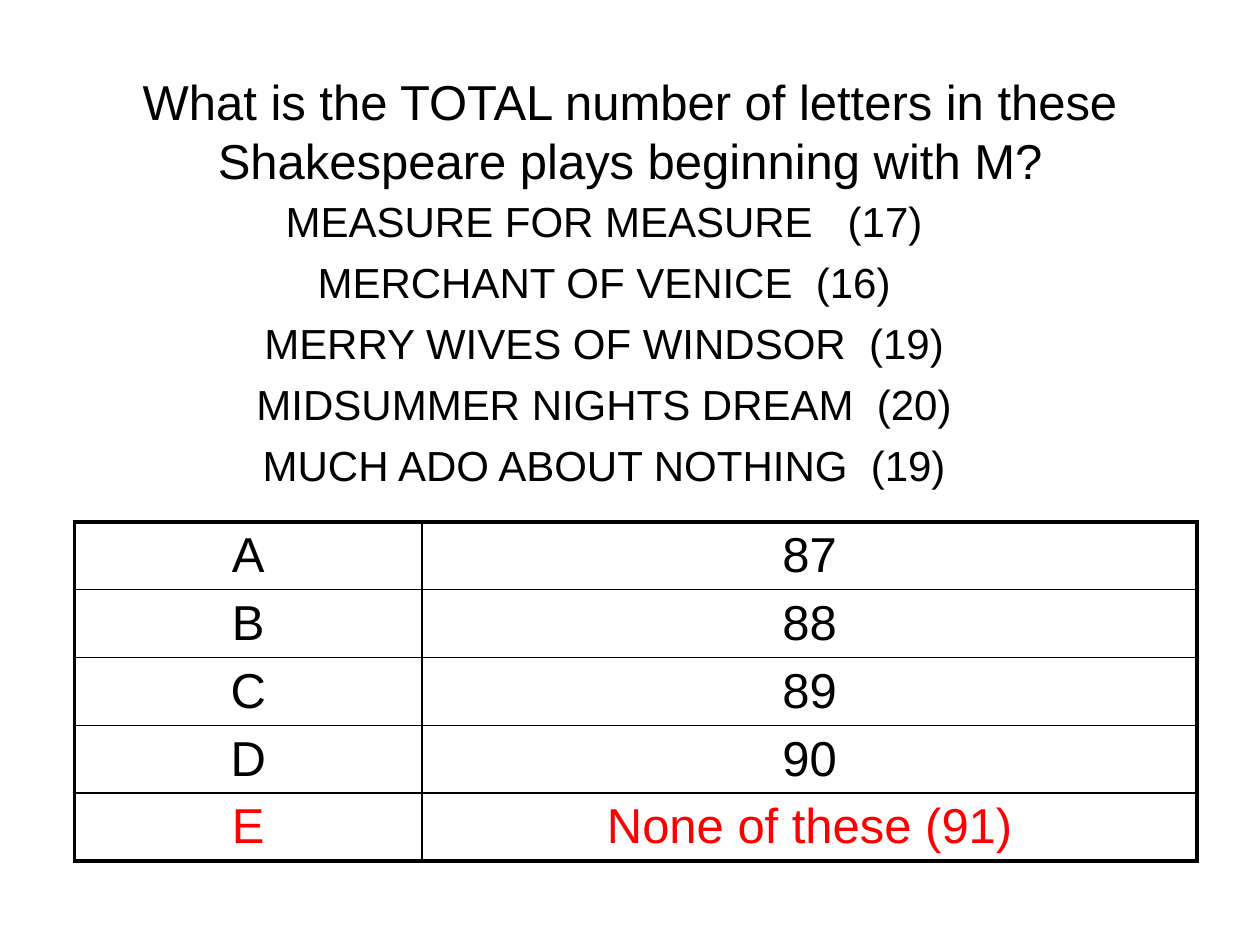
from lxml.etree import SubElement
from pptx import Presentation
from pptx.dml.color import RGBColor
from pptx.enum.text import MSO_ANCHOR, PP_ALIGN
from pptx.oxml.ns import qn
from pptx.util import Cm, Pt

QUESTION = "What is the TOTAL number of letters in these Shakespeare plays beginning with M?"
PLAYS = [
    "MEASURE FOR MEASURE   (17)",
    "MERCHANT OF VENICE  (16)",
    "MERRY WIVES OF WINDSOR  (19)",
    "MIDSUMMER NIGHTS DREAM  (20)",
    "MUCH ADO ABOUT NOTHING  (19)",
]
ANSWERS = [("A", "87"), ("B", "88"), ("C", "89"), ("D", "90"), ("E", "None of these (91)")]
CORRECT = "E"

THEME = {
    "font": "Arial",
    "text": "000000",
    "correct": "FF0000",
    "border": "000000",
    "large": 28,
    "medium": 24,
    "outer": 2.25,
    "inner": 1,
}
COLUMN_WIDTHS = [7.01, 15.62]
ROW_HEIGHT = 1.35


def format_paragraph(paragraph, size, color):
    paragraph.alignment = PP_ALIGN.CENTER
    for run in paragraph.runs:
        run.font.name = THEME["font"]
        run.font.size = Pt(size)
        run.font.color.rgb = RGBColor.from_string(color)


def add_text(slide, lines, left, top, width, height, size, anchor):
    shape = slide.shapes.add_textbox(Cm(left), Cm(top), Cm(width), Cm(height))
    frame = shape.text_frame
    frame.word_wrap = True
    frame.vertical_anchor = anchor
    frame.text = "\n".join(lines)
    for index, paragraph in enumerate(frame.paragraphs):
        format_paragraph(paragraph, size, THEME["text"])
        paragraph.space_before = Pt(6 if index else 0)


def set_borders(cell, outer_sides):
    properties = cell._tc.get_or_add_tcPr()
    for position, side in enumerate("LRTB"):
        width = THEME["outer"] if side in outer_sides else THEME["inner"]
        line = properties.makeelement(qn(f"a:ln{side}"), {"w": str(Pt(width))})
        fill = SubElement(line, qn("a:solidFill"))
        SubElement(fill, qn("a:srgbClr"), val=THEME["border"])
        properties.insert(position, line)


def add_answers(slide):
    frame = slide.shapes.add_table(
        len(ANSWERS), len(COLUMN_WIDTHS), Cm(1.5), Cm(10.52),
        Cm(sum(COLUMN_WIDTHS)), Cm(ROW_HEIGHT * len(ANSWERS)),
    )
    table = frame.table
    table.first_row = False
    table.horz_banding = False
    for column, width in zip(table.columns, COLUMN_WIDTHS):
        column.width = Cm(width)
    for row_index, answer in enumerate(ANSWERS):
        table.rows[row_index].height = Cm(ROW_HEIGHT)
        color = THEME["correct" if answer[0] == CORRECT else "text"]
        for column_index, text in enumerate(answer):
            cell = table.cell(row_index, column_index)
            cell.fill.background()
            cell.margin_top = Cm(0.13)
            cell.margin_bottom = Cm(0.05)
            cell.text_frame.text = text
            format_paragraph(cell.text_frame.paragraphs[0], THEME["large"], color)
            outer_sides = "L" if column_index == 0 else "R"
            if row_index == 0:
                outer_sides += "T"
            if row_index == len(ANSWERS) - 1:
                outer_sides += "B"
            set_borders(cell, outer_sides)


def main():
    presentation = Presentation()
    presentation.slide_width = Cm(25.4)
    presentation.slide_height = Cm(19.05)
    slide = presentation.slides.add_slide(presentation.slide_layouts[6])
    add_text(slide, [QUESTION], 1.27, 1.32, 22.86, 2.62, THEME["large"], MSO_ANCHOR.MIDDLE)
    add_answers(slide)
    add_text(slide, PLAYS, 1.27, 3.82, 21.82, 5.59, THEME["medium"], MSO_ANCHOR.TOP)
    presentation.save("out.pptx")


if __name__ == "__main__":
    main()
